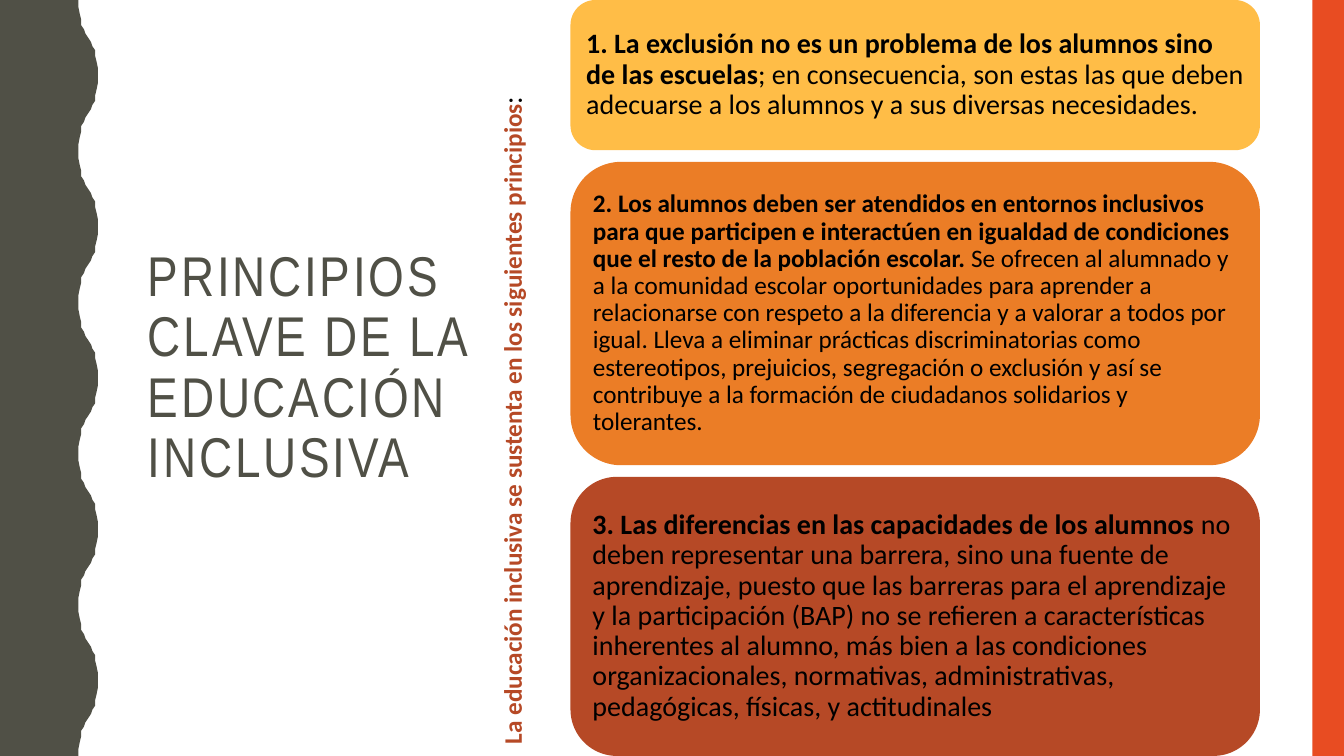
import pptx
import pptx.dml.color
import pptx.enum.shapes
import pptx.enum.text
import pptx.util

Pt = pptx.util.Pt
RGBColor = pptx.dml.color.RGBColor
SHAPE = pptx.enum.shapes.MSO_SHAPE
ANCHOR = pptx.enum.text.MSO_ANCHOR
ALIGN = pptx.enum.text.PP_ALIGN

SLATE = RGBColor(0x50, 0x50, 0x46)
RED = RGBColor(0xE8, 0x4C, 0x22)
YELLOW = RGBColor(0xFF, 0xBD, 0x47)
ORANGE = RGBColor(0xEB, 0x7D, 0x26)
RUST = RGBColor(0xB6, 0x49, 0x26)
BLACK = RGBColor(0, 0, 0)

WIDTH, HEIGHT = 960, 540
WAVE_PERIOD = 108
WAVE_MIDDLE = 63
WAVE_QUARTER = [(56.2, 0), (56.4, 5), (57, 10), (57.8, 14.4),
                (58.5, 18), (59.8, 21), (61.4, 24), (WAVE_MIDDLE, 27)]

CARD_LEFT, CARD_WIDTH, CARD_GAP = 407.5, 492.5, 8.3
CARDS = [
    (107.3, YELLOW, 20,
     "1. La exclusión no es un problema de los alumnos sino de las escuelas",
     "; en consecuencia, son estas las que deben adecuarse a los alumnos y a sus "
     "diversas necesidades."),
    (216.7, ORANGE, 18,
     "2. Los alumnos deben ser atendidos en entornos inclusivos para que participen "
     "e interactúen en igualdad de condiciones que el resto de la población escolar.",
     " Se ofrecen al alumnado y a la comunidad escolar oportunidades para aprender a "
     "relacionarse con respeto a la diferencia y a valorar a todos por igual. Lleva a "
     "eliminar prácticas discriminatorias como estereotipos, prejuicios, segregación o "
     "exclusión y así se contribuye a la formación de ciudadanos solidarios y tolerantes."),
    (199.4, RUST, 20,
     "3. Las diferencias en las capacidades de los alumnos ",
     "no deben representar una barrera, sino una fuente de aprendizaje, puesto que las "
     "barreras para el aprendizaje y la participación (BAP) no se refieren a "
     "características inherentes al alumno, más bien a las condiciones organizacionales, "
     "normativas, administrativas, pedagógicas, físicas, y actitudinales"),
]


def paint(shape, color):
    shape.shadow.inherit = False
    shape.fill.solid()
    shape.fill.fore_color.rgb = color
    shape.line.fill.background()


def add_block(s, kind, left, top, width, height, color):
    block = s.shapes.add_shape(kind, Pt(left), Pt(top), Pt(width), Pt(height))
    paint(block, color)
    return block


def add_wavy_edge(s):
    half = WAVE_QUARTER + [(2 * WAVE_MIDDLE - x, WAVE_PERIOD / 2 - y)
                           for x, y in WAVE_QUARTER[-2::-1]]
    wave = half + [(x, WAVE_PERIOD - y) for x, y in half[-2::-1]]
    points = [(x, y + top) for top in range(0, HEIGHT, WAVE_PERIOD) for x, y in wave]
    builder = s.shapes.build_freeform(0, 0, scale=Pt(1))
    builder.add_line_segments(points + [(0, HEIGHT)], close=True)
    paint(builder.convert_to_shape(), SLATE)


def add_run(p, text, bold=False, color=None):
    r = p.add_run()
    r.text = text
    r.font.bold = bold
    if color is not None:
        r.font.color.rgb = color
    return r


def add_textbox(s, left, top, width, height):
    box = s.shapes.add_textbox(Pt(left), Pt(top), Pt(width), Pt(height))
    box.text_frame.word_wrap = True
    return box


def add_title(s, text):
    tf = add_textbox(s, 98.6, 50.4, 266.4, 426.2).text_frame
    tf.vertical_anchor = ANCHOR.MIDDLE
    p = tf.paragraphs[0]
    p.line_spacing = 0.9
    p.font.name = "Arial Narrow"
    p.font.size = Pt(40)
    p.font.color.rgb = SLATE
    r = add_run(p, text)
    r.font._element.set("spc", "200")


def add_side_caption(s, text, ending):
    box = add_textbox(s, 90, 247.7, 550, 31.7)
    box.rotation = 270
    p = box.text_frame.paragraphs[0]
    p.font.name = "Calibri"
    add_run(p, text, True, RUST).font.size = Pt(18)
    add_run(p, ending, False, BLACK).font.size = Pt(20)


def add_card(s, top, height, color, size, heading, body):
    card = add_block(s, SHAPE.ROUNDED_RECTANGLE, CARD_LEFT, top, CARD_WIDTH, height, color)
    tf = card.text_frame
    tf.word_wrap = True
    tf.vertical_anchor = ANCHOR.MIDDLE
    tf.margin_left = tf.margin_right = tf.margin_top = tf.margin_bottom = Pt(0.3 * size)
    p = tf.paragraphs[0]
    p.alignment = ALIGN.LEFT
    p.line_spacing = 0.9
    p.font.name = "Calibri"
    p.font.size = Pt(size)
    p.font.color.rgb = BLACK
    add_run(p, heading, True)
    add_run(p, body)


def main():
    prs = pptx.Presentation()
    prs.slide_width, prs.slide_height = Pt(WIDTH), Pt(HEIGHT)
    s = prs.slides.add_slide(prs.slide_layouts[6])
    add_wavy_edge(s)
    add_block(s, SHAPE.RECTANGLE, 937.5, 0, 22.5, HEIGHT, RED)
    add_title(s, "PRINCIPIOS CLAVE DE LA EDUCACIÓN INCLUSIVA")
    top = 0
    for height, color, size, heading, body in CARDS:
        add_card(s, top, height, color, size, heading, body)
        top += height + CARD_GAP
    add_side_caption(
        s, "La educación inclusiva se sustenta en los siguientes principios", ":")
    prs.save("out.pptx")


if __name__ == "__main__":
    main()
